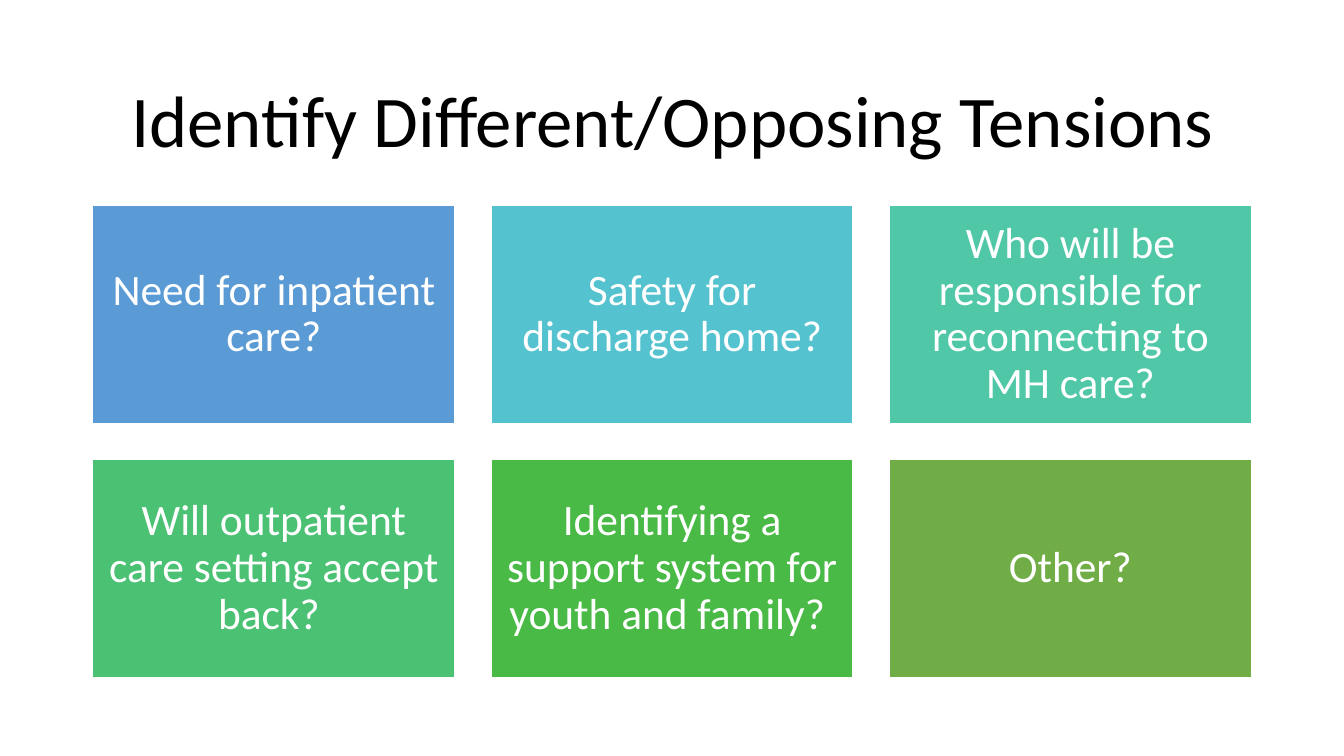
from pptx import Presentation
from pptx.dml.color import RGBColor
from pptx.enum import shapes, text
from pptx.util import Inches, Pt

BLACK = RGBColor(0x00, 0x00, 0x00)
WHITE = RGBColor(0xFF, 0xFF, 0xFF)
TENSIONS = [
    ("Need for inpatient care?", RGBColor(0x5B, 0x9B, 0xD5)),
    ("Safety for discharge home?", RGBColor(0x55, 0xC3, 0xCF)),
    ("Who will be responsible for reconnecting to MH care?", RGBColor(0x50, 0xC8, 0xA7)),
    ("Will outpatient care setting accept back? ", RGBColor(0x4B, 0xC1, 0x74)),
    ("Identifying a support system for youth and family? ", RGBColor(0x4A, 0xBA, 0x46)),
    ("Other?", RGBColor(0x70, 0xAD, 0x47)),
]


def write_centred(tf, wording, size, color):
    tf.word_wrap = True
    tf.auto_size = text.MSO_AUTO_SIZE.NONE
    tf.vertical_anchor = text.MSO_ANCHOR.MIDDLE
    p = tf.paragraphs[0]
    p.alignment = text.PP_ALIGN.CENTER
    p.line_spacing = 0.9
    r = p.add_run()
    r.text = wording
    r.font.name = "Calibri"
    r.font.size = Pt(size)
    r.font.color.rgb = color


def add_title(s, left, top, width, height):
    title = s.shapes.title
    title.left, title.top = Inches(left), Inches(top)
    title.width, title.height = Inches(width), Inches(height)
    write_centred(title.text_frame, "Identify Different/Opposing Tensions", 52, BLACK)


def add_tile(s, left, top, width, height, wording, fill):
    sp = s.shapes.add_shape(shapes.MSO_SHAPE.RECTANGLE, Inches(left), Inches(top),
                            Inches(width), Inches(height))
    sp.shadow.inherit = False
    sp.fill.solid()
    sp.fill.fore_color.rgb = fill
    sp.line.color.rgb = WHITE
    sp.line.width = Pt(1)
    tf = sp.text_frame
    tf.margin_left = tf.margin_right = tf.margin_top = tf.margin_bottom = Inches(0.13)
    write_centred(tf, wording, 31, WHITE)


def add_tile_grid(s, left, top, width, height, columns=3, gap=0.36):
    rows = len(TENSIONS) // columns
    tile_w = (width - (columns - 1) * gap) / columns
    tile_h = (height - (rows - 1) * gap) / rows
    for i, (wording, fill) in enumerate(TENSIONS):
        row, column = divmod(i, columns)
        add_tile(s, left + column * (tile_w + gap), top + row * (tile_h + gap),
                 tile_w, tile_h, wording, fill)


def main():
    prs = Presentation()
    prs.slide_width, prs.slide_height = Inches(13.33), Inches(7.5)
    s = prs.slides.add_slide(prs.slide_layouts[5])
    add_title(s, 0.92, 0.61, 11.5, 1.24)
    add_tile_grid(s, 0.92, 2.04, 11.49, 4.68)
    prs.save("out.pptx")


if __name__ == "__main__":
    main()
